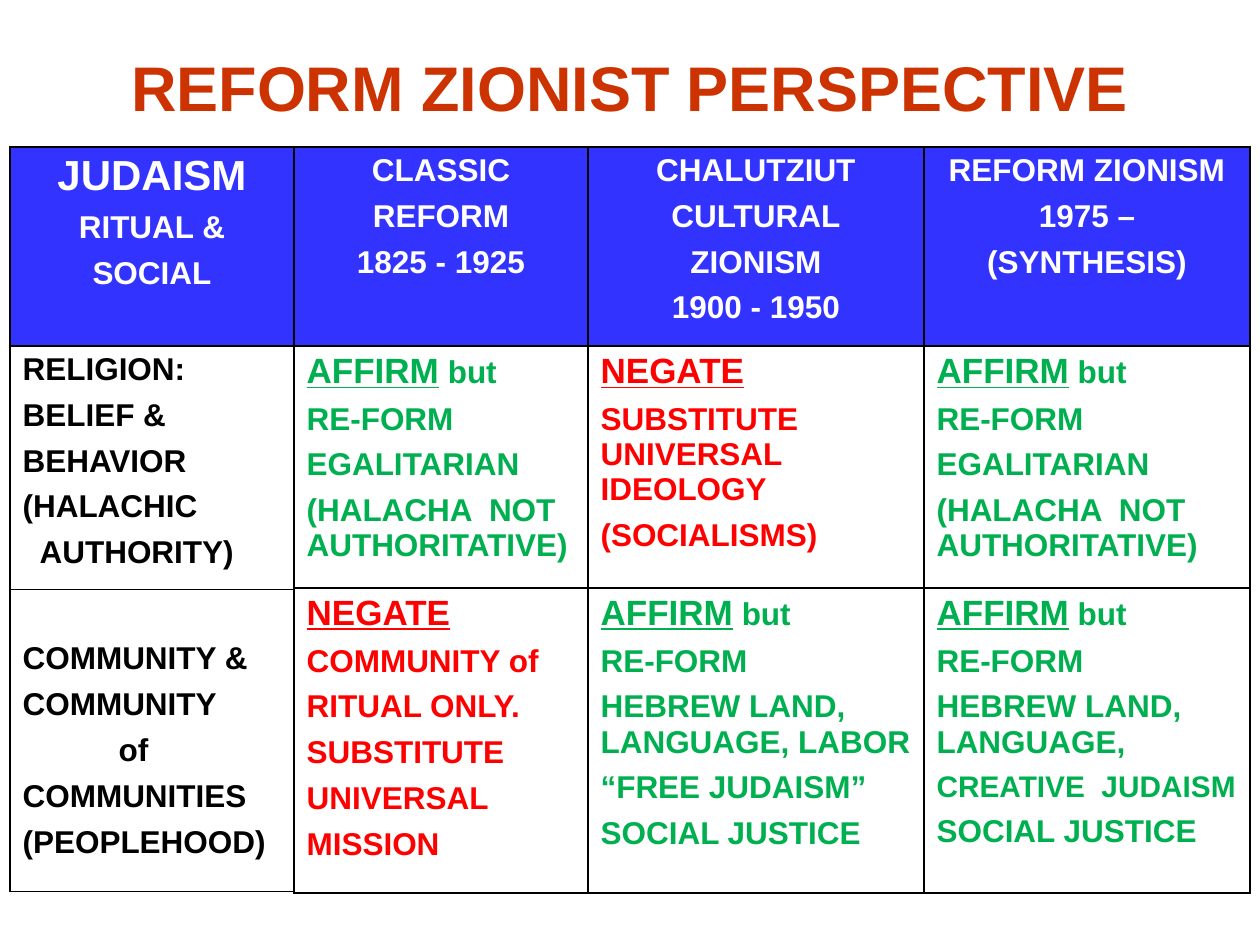
"""Build the Reform Zionist perspective slide: a title over four column tables."""
from dataclasses import dataclass

from lxml import etree
from pptx import Presentation
from pptx import util as u
from pptx.dml.color import RGBColor
from pptx.enum import text as t
from pptx.oxml.ns import qn

PX = 914400 // 126
RUST = RGBColor(0xCC, 0x33, 0x00)
BLUE = RGBColor(0x33, 0x33, 0xFF)
WHITE = RGBColor(0xFF, 0xFF, 0xFF)
BLACK = RGBColor(0x00, 0x00, 0x00)
GREEN = RGBColor(0x00, 0xB0, 0x50)
RED = RGBColor(0xFF, 0x00, 0x00)
TOP = 147
ROWS = (199, 242, 305)


@dataclass(frozen=True)
class Line:
    text: str
    size: int = 18
    under: bool = False
    tail: str = ""
    dent: int = 0


@dataclass(frozen=True)
class Cell:
    lines: tuple[Line | str, ...]
    color: RGBColor
    head: bool = False
    pad: int = 6


@dataclass(frozen=True)
class Column:
    left: int
    width: int
    cells: tuple[Cell, ...]
    last: int = ROWS[2]


def head(*lines: Line | str) -> Cell:
    """Make a blue heading cell."""
    return Cell(lines, WHITE, head=True)


def affirm(*lines: Line | str) -> Cell:
    """Make a green cell that affirms."""
    return Cell((Line("AFFIRM", 20, True, " but"), "RE-FORM") + lines, GREEN)


def negate(*lines: Line | str) -> Cell:
    """Make a red cell that negates."""
    return Cell((Line("NEGATE", 20, True),) + lines, RED)


RELIGION = affirm("EGALITARIAN", "(HALACHA  NOT AUTHORITATIVE)")

COLUMNS = (
    Column(10, 284, (
        head(Line("JUDAISM", 24), "RITUAL &", "SOCIAL"),
        Cell(("RELIGION:", "BELIEF &", "BEHAVIOR", "(HALACHIC",
              Line("AUTHORITY)", dent=17)), BLACK),
        Cell(("COMMUNITY &", "COMMUNITY", Line("of", dent=96),
              "COMMUNITIES", "(PEOPLEHOOD)"), BLACK, pad=52),
    ), last=302),
    Column(294, 294, (
        head("CLASSIC", "REFORM", "1825 - 1925"),
        RELIGION,
        negate("COMMUNITY of", "RITUAL ONLY.", "SUBSTITUTE", "UNIVERSAL",
               "MISSION"),
    )),
    Column(588, 336, (
        head("CHALUTZIUT", "CULTURAL", "ZIONISM", "1900 - 1950"),
        negate("SUBSTITUTE\nUNIVERSAL\nIDEOLOGY", "(SOCIALISMS)"),
        affirm("HEBREW LAND,\nLANGUAGE, LABOR", "“FREE JUDAISM”",
               "SOCIAL JUSTICE"),
    )),
    Column(924, 326, (
        head("REFORM ZIONISM", "1975 –", "(SYNTHESIS)"),
        RELIGION,
        affirm("HEBREW LAND,\nLANGUAGE,", Line("CREATIVE  JUDAISM", 17),
               "SOCIAL JUSTICE"),
    )),
)


def write(para, text: str, *, size: int = 18, color: RGBColor = BLACK,
          under: bool = False) -> None:
    """Add bold text to a paragraph, with a line break at each newline."""
    for i, part in enumerate(text.split("\n")):
        if i:
            para.add_line_break()
        run = para.add_run()
        run.text = part
        font = run.font
        font.name, font.size, font.bold = "Arial", u.Pt(size), True
        font.underline = under
        font.color.rgb = color


def border(box) -> None:
    """Give a table cell a thin black line on every side."""
    props = box._tc.get_or_add_tcPr()
    for i, side in enumerate(("lnL", "lnR", "lnT", "lnB")):
        line = etree.Element(qn(f"a:{side}"), w=str(u.Pt(1)))
        fill = etree.SubElement(line, qn("a:solidFill"))
        etree.SubElement(fill, qn("a:srgbClr"), val=str(BLACK))
        props.insert(i, line)


def fill_cell(box, cell: Cell) -> None:
    """Fill one table cell with its lines."""
    if cell.head:
        box.fill.solid()
        box.fill.fore_color.rgb = BLUE
    else:
        box.fill.background()
    border(box)
    box.margin_top = cell.pad * PX
    frame = box.text_frame
    for i, item in enumerate(cell.lines):
        line = Line(item) if isinstance(item, str) else item
        para = frame.add_paragraph() if i else frame.paragraphs[0]
        para.alignment = t.PP_ALIGN.CENTER if cell.head else t.PP_ALIGN.LEFT
        para.space_after = u.Pt(6)
        if line.dent:
            para._p.get_or_add_pPr().set("marL", str(line.dent * PX))
        write(para, line.text, size=line.size, color=cell.color,
              under=line.under)
        if line.tail:
            write(para, line.tail, color=cell.color)


def draw_column(slide, col: Column) -> None:
    """Draw one column as its own table."""
    highs = ROWS[:2] + (col.last,)
    table = slide.shapes.add_table(len(highs), 1, col.left * PX, TOP * PX,
                                   col.width * PX, sum(highs) * PX).table
    table.first_row = table.horz_banding = False
    for i, (high, cell) in enumerate(zip(highs, col.cells)):
        table.rows[i].height = high * PX
        fill_cell(table.cell(i, 0), cell)


def draw_title(slide, text: str) -> None:
    """Draw the slide title."""
    frame = slide.shapes.add_textbox(63 * PX, 42 * PX, 1134 * PX,
                                     88 * PX).text_frame
    frame.word_wrap = True
    frame.vertical_anchor = t.MSO_ANCHOR.MIDDLE
    para = frame.paragraphs[0]
    para.alignment = t.PP_ALIGN.CENTER
    write(para, text, size=36, color=RUST)


def main() -> None:
    """Build and save the slide."""
    deck = Presentation()
    deck.slide_width, deck.slide_height = u.Inches(10), u.Inches(7.5)
    slide = deck.slides.add_slide(deck.slide_layouts[6])
    draw_title(slide, "REFORM ZIONIST PERSPECTIVE")
    for col in COLUMNS:
        draw_column(slide, col)
    deck.save("out.pptx")


if __name__ == "__main__":
    main()
